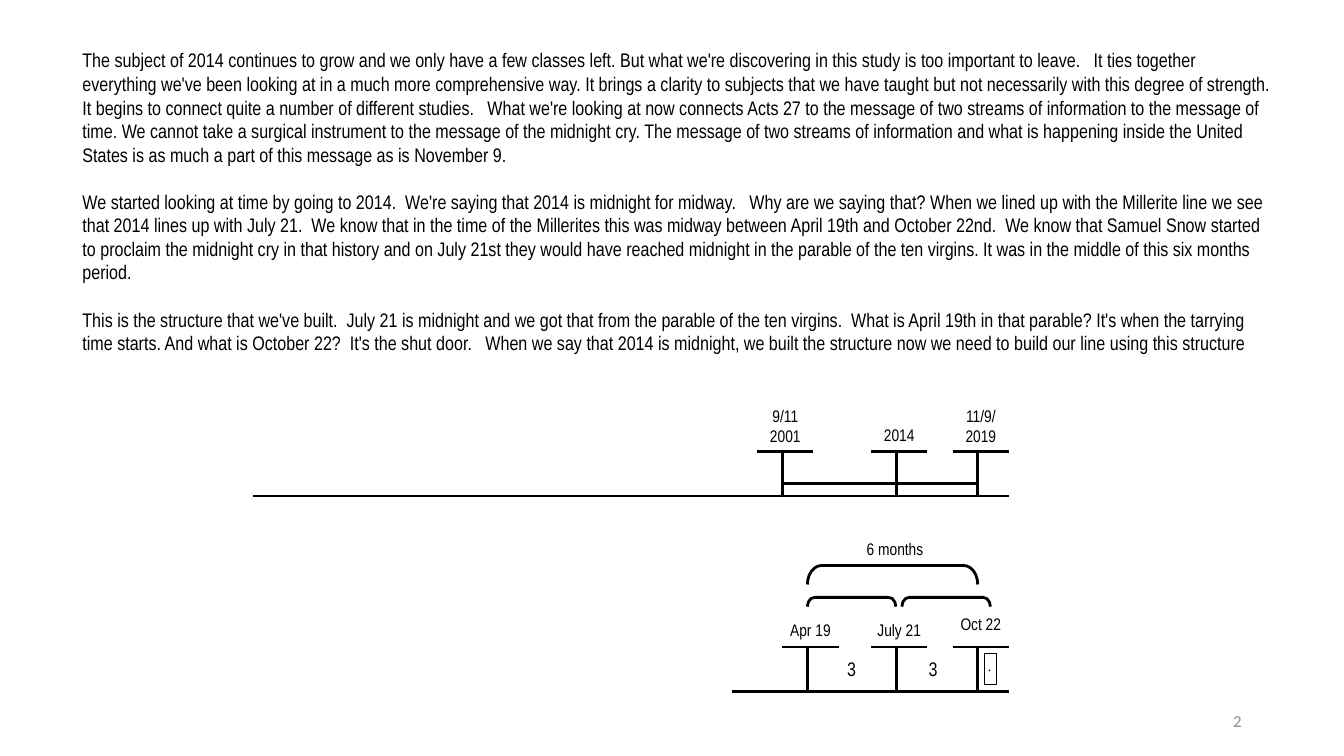
from lxml import etree
from pptx import Presentation
from pptx.dml.color import RGBColor
from pptx.enum.shapes import MSO_CONNECTOR, MSO_SHAPE
from pptx.enum.text import MSO_ANCHOR, PP_ALIGN
from pptx.oxml.ns import qn
from pptx.util import Pt

STRAIGHT = MSO_CONNECTOR.STRAIGHT
BRACKET, RECT = MSO_SHAPE.LEFT_BRACKET, MSO_SHAPE.RECTANGLE
LEFT, CENTER, RIGHT = PP_ALIGN.LEFT, PP_ALIGN.CENTER, PP_ALIGN.RIGHT
TOP, MIDDLE = MSO_ANCHOR.TOP, MSO_ANCHOR.MIDDLE
BLACK, GREY = "000000", "8C8C8C"
NARROW = "Arial Narrow"

prs = Presentation()
prs.slide_width, prs.slide_height = Pt(960), Pt(540)
s = prs.slides.add_slide(prs.slide_layouts[6])


def write(sp, text, size, font=NARROW, color=BLACK, align=CENTER, inset=2.9):
    tf = sp.text_frame
    tf.word_wrap = True
    tf.vertical_anchor = TOP
    tf.margin_left = tf.margin_right = tf.margin_top = tf.margin_bottom = Pt(inset)
    tf.text = text
    for p in tf.paragraphs:
        p.alignment = align
        for r in p.runs:
            r.font.size, r.font.name = Pt(size), font
            r.font.color.rgb = RGBColor.from_string(color)
    return tf


def line(x1, y1, x2, y2):
    c = s.shapes.add_connector(STRAIGHT, Pt(x1), Pt(y1), Pt(x2), Pt(y2))
    c.line.color.rgb = RGBColor.from_string(BLACK)
    c.line.width = Pt(2)
    etree.SubElement(c._element.spPr, qn("a:effectLst"))


# Slide number
sp = s.shapes.add_textbox(Pt(678), Pt(500.5), Pt(216), Pt(28.75))
tf = write(sp, "2", 12, "Calibri", GREY, RIGHT, 7.2)
tf.vertical_anchor = MIDDLE

# Body text, one blank line's height between paragraphs
body = [
    "The subject of 2014 continues to grow and we only have a few classes left. "
    "But what we're discovering in this study is too important to leave.   It ties "
    "together everything we've been looking at in a much more comprehensive way. It "
    "brings a clarity to subjects that we have taught but not necessarily with this "
    "degree of strength. It begins to connect quite a number of different studies.   "
    "What we're looking at now connects Acts 27 to the message of two streams of "
    "information to the message of time. We cannot take a surgical instrument to the "
    "message of the midnight cry. The message of two streams of information and what "
    "is happening inside the United States is as much a part of this message as is "
    "November 9.",
    "We started looking at time by going to 2014.  We're saying that 2014 is midnight "
    "for midway.   Why are we saying that? When we lined up with the Millerite line we "
    "see that 2014 lines up with July 21.  We know that in the time of the Millerites "
    "this was midway between April 19th and October 22nd.  We know that Samuel Snow "
    "started to proclaim the midnight cry in that history and on July 21st they would "
    "have reached midnight in the parable of the ten virgins. It was in the middle of "
    "this six months period.",
    "This is the structure that we've built.  July 21 is midnight and we got that from "
    "the parable of the ten virgins.  What is April 19th in that parable? It's when the "
    "tarrying time starts. And what is October 22?  It's the shut door.   When we say "
    "that 2014 is midnight, we built the structure now we need to build our line using "
    "this structure",
]
sp = s.shapes.add_textbox(Pt(51.8), Pt(31), Pt(864.7), Pt(227.5))
tf = write(sp, "\n".join(body), 14, align=LEFT)
tf.margin_left = tf.margin_right = Pt(7.2)
tf.margin_top = tf.margin_bottom = Pt(3.6)
for p in tf.paragraphs[1:]:
    p.space_before = Pt(16.9)

# Two timelines: start of the base line, top of the ticks, (x, label, label height)
END, TICK, CAP, OVERHANG = 720.7, 31.7, 40.4, 18
timelines = [
    (180.7, 322.6, [(558.7, "9/11\n2001", 36), (640.1, "2014", 22.4),
                    (698.4, "11/9/\n2019", 36)]),
    (522.7, 462.2, [(576.7, "Apr 19", 22.4), (640.1, "July 21", 22.4),
                    (698.4, "Oct 22", 26.8)]),
]
for start, top, marks in timelines:
    line(start, top + TICK, END, top + TICK)
    for x, label, height in marks:
        left = x - OVERHANG
        line(x, top, x, top + TICK)
        line(left, top, left + CAP, top)
        sp = s.shapes.add_textbox(Pt(left), Pt(top - height), Pt(CAP), Pt(height))
        write(sp, label, 12)

# Bar joining the marks of the upper timeline
line(558.7, 345.6, 698.4, 345.6)

# Month counts and the total
for x, y, width, label, size in [(594.7, 466.6, 27, "3", 14), (653, 466.6, 27, "3", 14),
                                 (599, 381.6, 80.6, "6 months", 12)]:
    sp = s.shapes.add_textbox(Pt(x), Pt(y), Pt(width), Pt(22.4))
    write(sp, label, size)

# Brackets, turned to open downwards: left, top, span, depth as seen
for x, y, span, depth, curve in [(576.7, 403.9, 121.7, 13.6, 0.75),
                                 (576.7, 426.7, 63.2, 6.6, 0.78),
                                 (644.2, 426.7, 63.2, 6.6, 0.78)]:
    sp = s.shapes.add_shape(BRACKET, Pt(x + (span - depth) / 2),
                            Pt(y + (depth - span) / 2), Pt(depth), Pt(span))
    sp.rotation = 90
    sp.adjustments[0] = curve
    sp.shadow.inherit = False
    sp.fill.background()
    sp.line.color.rgb = RGBColor.from_string(BLACK)
    sp.line.width = Pt(2)

# Small box after the last mark
sp = s.shapes.add_shape(RECT, Pt(702.7), Pt(466.6), Pt(9), Pt(22.4))
sp.shadow.inherit = False
sp.fill.background()
sp.line.color.rgb = RGBColor.from_string(BLACK)
sp.line.width = Pt(0.25)
write(sp, ".", 10, "Times New Roman", align=LEFT)

prs.save("out.pptx")
